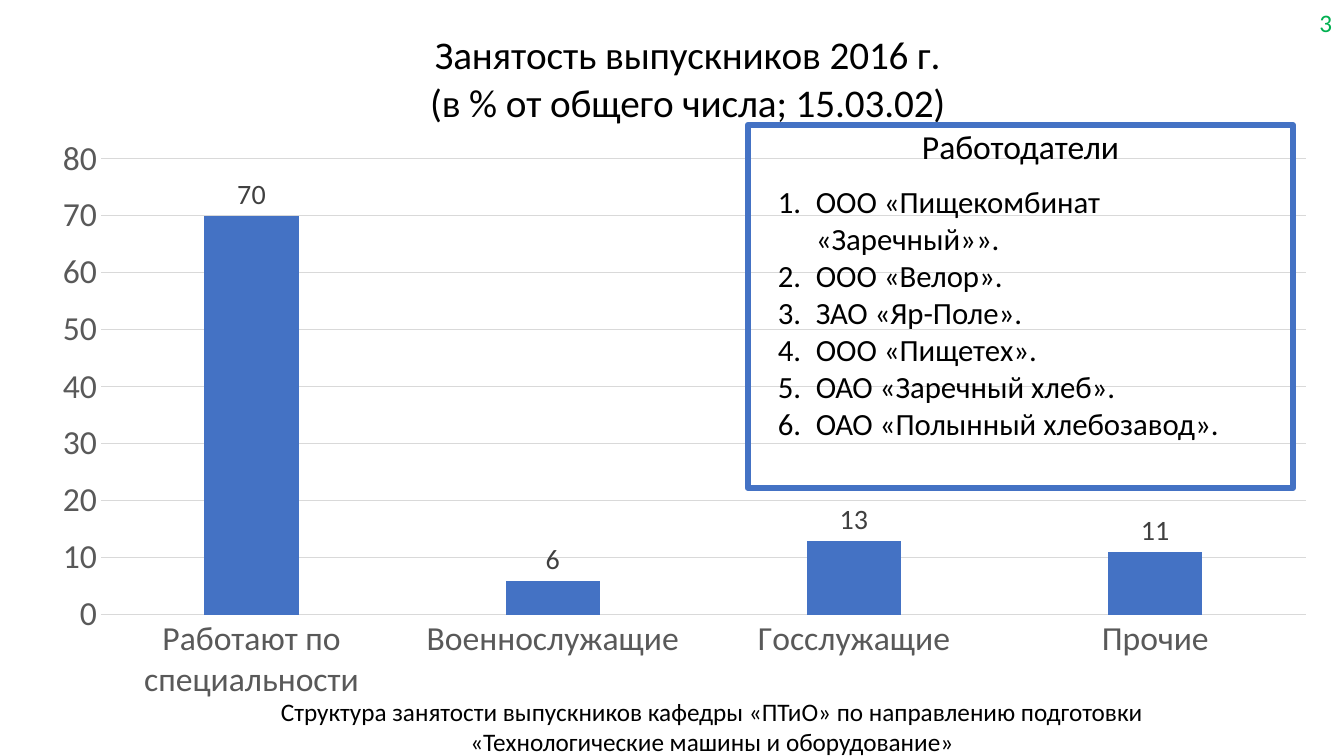
from lxml.etree import SubElement
from pptx import Presentation
from pptx.chart.data import CategoryChartData
from pptx.dml.color import RGBColor
from pptx.enum.chart import XL_CHART_TYPE, XL_LABEL_POSITION, XL_TICK_MARK
from pptx.enum.shapes import MSO_SHAPE
from pptx.enum.text import MSO_ANCHOR, PP_ALIGN
from pptx.oxml import parse_xml
from pptx.oxml.ns import nsdecls, qn
from pptx.util import Pt

TITLE = ["Занятость выпускников 2016 г.", "(в % от общего числа; 15.03.02)"]
SHARES = {
    "Работают по специальности": 70,
    "Военнослужащие": 6,
    "Госслужащие": 13,
    "Прочие": 11,
}
HEAD = "Работодатели"
FIRMS = [
    "ООО «Пищекомбинат «Заречный»».",
    "ООО «Велор».",
    "ЗАО «Яр-Поле».",
    "ООО «Пищетех».",
    "ОАО «Заречный хлеб».",
    "ОАО «Полынный хлебозавод».",
]
NOTE = ("Структура занятости выпускников кафедры «ПТиО» по направлению "
        "подготовки «Технологические машины и оборудование»")
PAGE = "3"

# left, top, width, height in px
CHART = (37, 0, 1295, 716)
PLOT = (101, 159, 1205, 456)
TITLE_AT = (427, 28)
FRAME = (748, 125, 545, 363)
LIST = (768, 178, 509, 271)
PAGE_AT = (1280, 2, 62, 40)
NOTE_AT = (192, 691, 1040, 65)
INDENT = 38

FONT = "Calibri"
BLACK = RGBColor(0, 0, 0)
BLUE = RGBColor(0x44, 0x72, 0xC4)
GREEN = RGBColor(0, 0xB0, 0x50)
GREY = RGBColor(0x59, 0x59, 0x59)
DARK = RGBColor(0x40, 0x40, 0x40)
PALE = RGBColor(0xD9, 0xD9, 0xD9)

WIDE, HIGH = 1344, 756
SCALE = 12192000 / WIDE


def emu(*px):
    return [round(n * SCALE) for n in px]


def style(font, size, color):
    font.name, font.size, font.bold = FONT, Pt(size), False
    font.color.rgb = color


def fill_text(frame, lines, size, color, align, bullet=False):
    frame.word_wrap = True
    frame.vertical_anchor = MSO_ANCHOR.TOP
    frame.text = "\n".join(lines)
    for para in frame.paragraphs:
        para.alignment = align
        if bullet:
            props = para._p.get_or_add_pPr()
            left, = emu(INDENT)
            props.set("marL", str(left))
            props.set("indent", str(-left))
            SubElement(props, qn("a:buFont"), typeface="+mj-lt")
            SubElement(props, qn("a:buAutoNum"), type="arabicPeriod")
        for run in para.runs:
            style(run.font, size, color)


def add_text(slide, area, lines, size, color, align, bullet=False):
    box = slide.shapes.add_textbox(*emu(*area))
    fill_text(box.text_frame, lines, size, color, align, bullet)


def place(node, index, area, inner=False):
    """Pin a chart part to an area given in slide px."""
    for old in node.findall(qn("c:layout")):
        node.remove(old)
    left, top, width, height = CHART
    vals = {"x": (area[0] - left) / width, "y": (area[1] - top) / height}
    if inner:
        vals.update(w=area[2] / width, h=area[3] / height)
    target = '<c:layoutTarget val="inner"/>' if inner else ""
    modes = "".join(f'<c:{k}Mode val="edge"/>' for k in "xy")
    sizes = "".join(f'<c:{k} val="{v:.4f}"/>' for k, v in vals.items())
    node.insert(index, parse_xml(
        f'<c:layout {nsdecls("c")}><c:manualLayout>{target}{modes}{sizes}'
        "</c:manualLayout></c:layout>"))


def add_chart(slide):
    data = CategoryChartData()
    data.categories = list(SHARES)
    data.add_series("Series 1", list(SHARES.values()))
    chart = slide.shapes.add_chart(
        XL_CHART_TYPE.COLUMN_CLUSTERED, *emu(*CHART), data).chart
    style(chart.font, 10, BLACK)
    chart.has_legend = False
    chart.has_title = True
    fill_text(chart.chart_title.text_frame, TITLE, 28, BLACK, PP_ALIGN.CENTER)

    cats, vals = chart.category_axis, chart.value_axis
    for axis in (cats, vals):
        axis.major_tick_mark = axis.minor_tick_mark = XL_TICK_MARK.NONE
        style(axis.tick_labels.font, 24, GREY)
    vals.minimum_scale, vals.maximum_scale, vals.major_unit = 0, 80, 10
    vals.format.line.fill.background()
    for line in (cats.format.line, vals.major_gridlines.format.line):
        line.color.rgb, line.width = PALE, Pt(0.75)

    plot = chart.plots[0]
    plot.gap_width, plot.overlap, plot.vary_by_categories = 219, -27, False
    fill = plot.series[0].format.fill
    fill.solid()
    fill.fore_color.rgb = BLUE
    plot.has_data_labels = True
    labels = plot.data_labels
    labels.show_value = True
    labels.position = XL_LABEL_POSITION.OUTSIDE_END
    style(labels.font, 20, DARK)

    root = chart.element.find(qn("c:chart"))
    place(root.find(qn("c:title")), 1, TITLE_AT)
    place(root.find(qn("c:plotArea")), 0, PLOT, inner=True)


def add_frame(slide):
    box = slide.shapes.add_shape(MSO_SHAPE.RECTANGLE, *emu(*FRAME))
    box.shadow.inherit = False
    box.fill.background()
    box.line.color.rgb, box.line.width = BLUE, Pt(4.5)
    fill_text(box.text_frame, [HEAD], 24, BLACK, PP_ALIGN.CENTER)
    box.text_frame.paragraphs[0].line_spacing = 0.9


def main():
    deck = Presentation()
    deck.slide_width, deck.slide_height = emu(WIDE, HIGH)
    slide = deck.slides.add_slide(deck.slide_layouts[6])
    add_chart(slide)
    add_frame(slide)
    add_text(slide, LIST, FIRMS, 22, BLACK, PP_ALIGN.LEFT, bullet=True)
    add_text(slide, PAGE_AT, [PAGE], 18, GREEN, PP_ALIGN.RIGHT)
    add_text(slide, NOTE_AT, [NOTE], 18, BLACK, PP_ALIGN.CENTER)
    deck.save("out.pptx")


if __name__ == "__main__":
    main()
